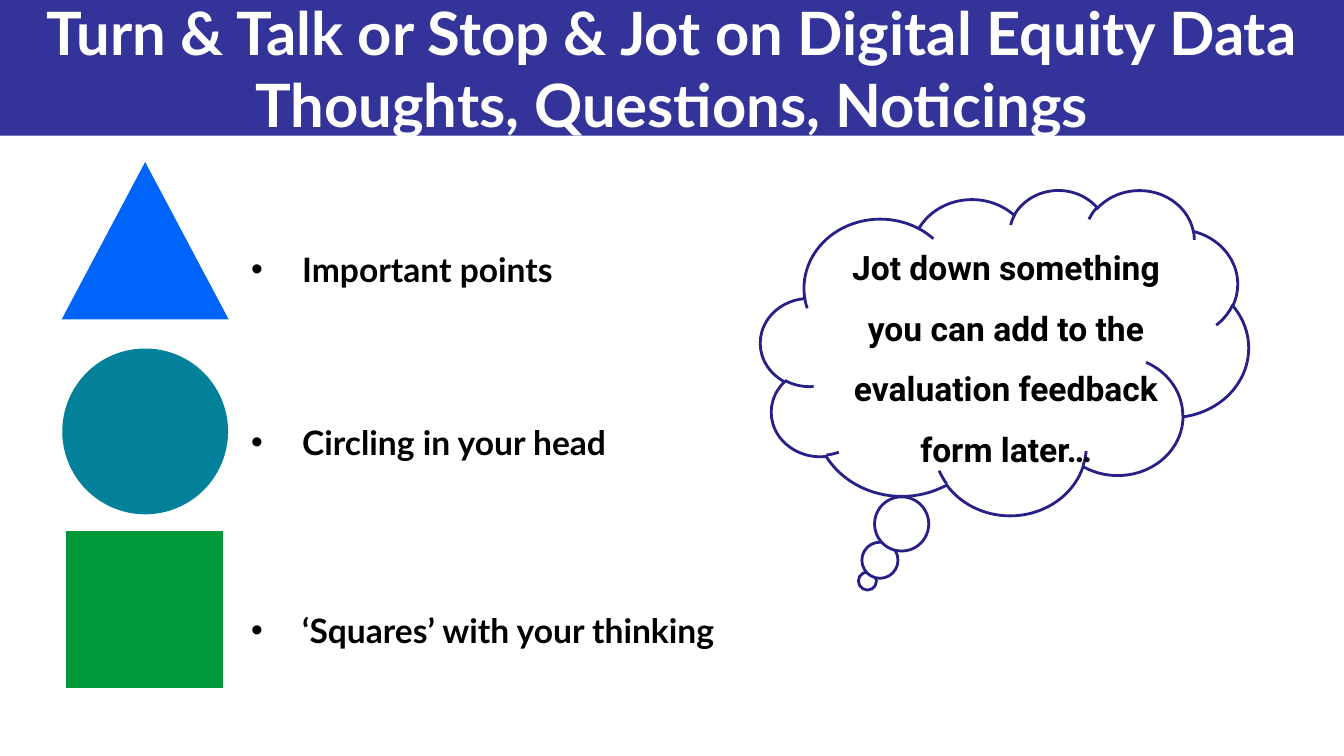
from dataclasses import dataclass

from lxml.etree import SubElement
from pptx import Presentation
from pptx.dml.color import RGBColor
from pptx.enum.shapes import MSO_SHAPE as Shape
from pptx.enum.text import MSO_ANCHOR as Anchor, PP_ALIGN as Align
from pptx.oxml.ns import qn
from pptx.slide import Slide
from pptx.util import Inches, Pt


def color(value):
    return RGBColor.from_string(value)


def write(frame, text, *, font="Lato", size=18, ink="000000", align=Align.LEFT,
          anchor=Anchor.TOP, spacing=1.0, after=0, bullet=None, indent=0):
    frame.word_wrap = True
    frame.vertical_anchor = anchor
    paragraph = frame.paragraphs[0]
    paragraph.text = text
    paragraph.alignment = align
    paragraph.line_spacing = spacing
    paragraph.space_after = Pt(after)
    if bullet:
        properties = paragraph._p.get_or_add_pPr()
        properties.set("marL", str(Inches(indent)))
        properties.set("indent", str(-Inches(indent)))
        SubElement(properties, qn("a:buFont"), typeface="Arial")
        SubElement(properties, qn("a:buChar"), char=bullet)
    for run in paragraph.runs:
        run.font.name = font
        run.font.size = Pt(size)
        run.font.bold = True
        run.font.color.rgb = color(ink)


@dataclass
class Board:
    """Slide canvas measured on a grid of 100 columns with square cells."""
    slide: Slide
    cell: float = 0.1

    def place(self, *cells):
        return [Inches(count * self.cell) for count in cells]

    def figure(self, kind, area, fill, line=None, weight=1, pointer=()):
        figure = self.slide.shapes.add_shape(kind, *self.place(*area))
        figure.shadow.inherit = False
        figure.fill.solid()
        figure.fill.fore_color.rgb = color(fill)
        if line:
            figure.line.color.rgb = color(line)
            figure.line.width = Pt(weight)
            SubElement(figure.line._get_or_add_ln(), qn("a:miter"), lim="800000")
        else:
            figure.line.fill.background()
        for index, value in enumerate(pointer):
            figure.adjustments[index] = value

    def text(self, words, area, **style):
        box = self.slide.shapes.add_textbox(*self.place(*area))
        write(box.text_frame, words, **style)

    def bullet(self, words, area):
        self.text(words, area, anchor=Anchor.MIDDLE, spacing=1.5, after=4.4,
                  bullet="•", indent=0.38)


def main():
    deck = Presentation()
    deck.slide_width = Inches(10)
    deck.slide_height = deck.slide_width * 9 // 16
    board = Board(deck.slides.add_slide(deck.slide_layouts[6]))

    banner = (0, 0, 100, 10.1)
    board.figure(Shape.RECTANGLE, banner, "333399")
    board.text("Turn & Talk or Stop & Jot on Digital Equity Data\v"
               "Thoughts, Questions, Noticings", banner, size=32, ink="FFFFFF",
               align=Align.CENTER, anchor=Anchor.MIDDLE, after=30)

    prompts = [
        ("Important points", (14.2, 29.5, 10.1),
         Shape.ISOSCELES_TRIANGLE, (4.7, 12.2, 12.2, 11.5), "0064FB"),
        ("Circling in your head", (27.5, 29.5, 9.3),
         Shape.OVAL, (4.7, 26, 12.2, 12.2), "03819B"),
        ("‘Squares’ with your thinking", (40, 37.8, 12.2),
         Shape.RECTANGLE, (5, 39.6, 11.5, 11.5), "009939"),
    ]
    for words, (top, width, height), symbol, area, hue in prompts:
        board.bullet(words, (17.7, top, width, height))
        board.figure(symbol, area, hue, line=hue)

    board.figure(Shape.CLOUD_CALLOUT, (56.6, 14.1, 36.3, 24.2), "FFFFFF",
                 line="262087", weight=1.5, pointer=(-0.281, 0.704))
    board.text("Jot down something you can add to the evaluation feedback form later…",
               (60.4, 16.4, 28.9, 27), font="Roboto", align=Align.CENTER,
               spacing=1.5, after=4.4)
    deck.save("out.pptx")


if __name__ == "__main__":
    main()
